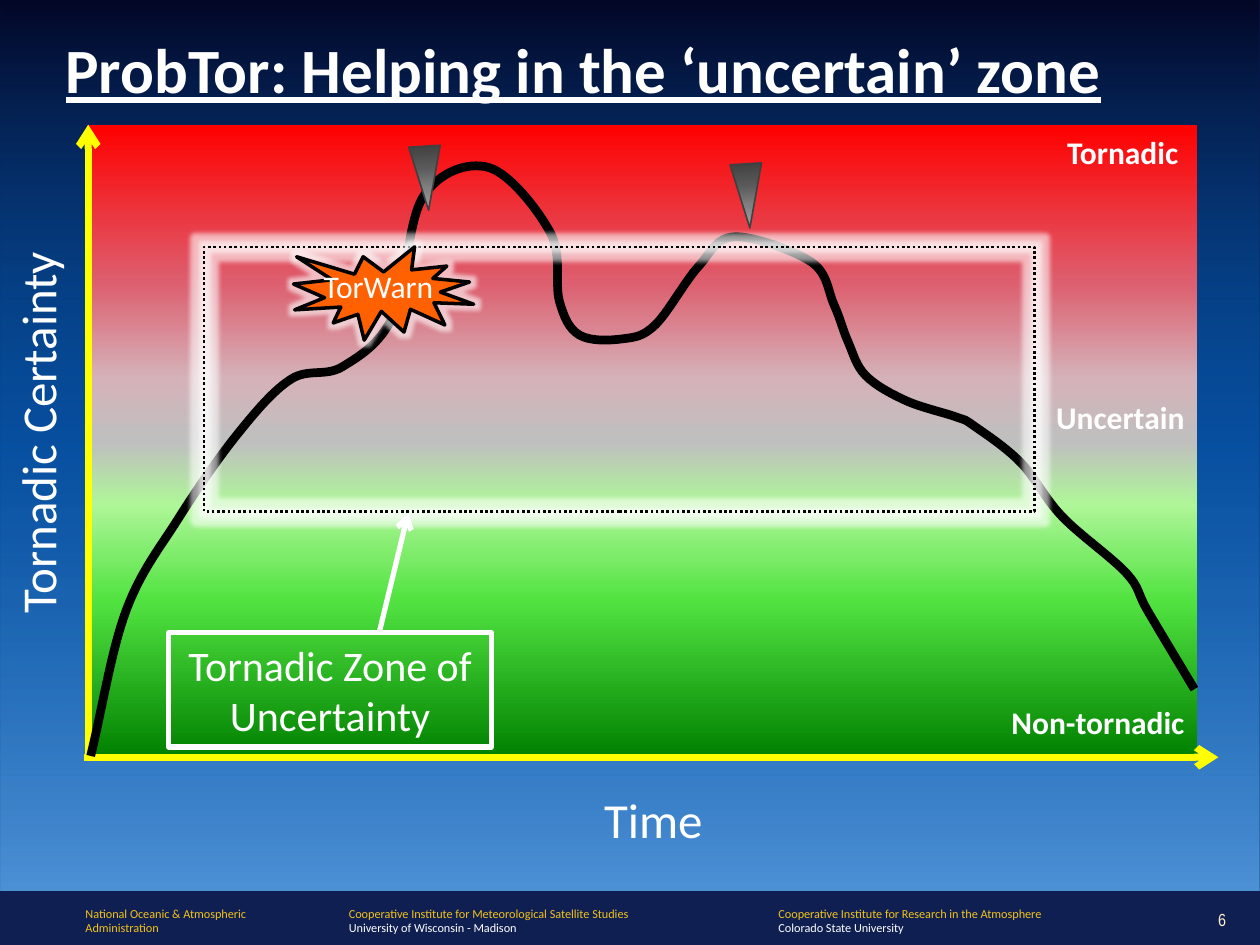
from lxml.etree import SubElement
from pptx import Presentation
from pptx.dml.color import RGBColor
from pptx.enum.dml import MSO_LINE
from pptx.enum.shapes import MSO_CONNECTOR, MSO_SHAPE
from pptx.enum.text import MSO_ANCHOR, PP_ALIGN
from pptx.oxml.ns import qn
from pptx.util import Inches, Pt

WHITE = RGBColor(0xFF, 0xFF, 0xFF)
BLACK = RGBColor(0, 0, 0)
NAVY = RGBColor(0x0F, 0x1F, 0x52)
GOLD = RGBColor(0xF2, 0xC3, 0x1A)
CREAM = RGBColor(0xFF, 0xF1, 0xCE)
YELLOW = RGBColor(0xFF, 0xFF, 0)
ORANGE = RGBColor(0xFF, 0x61, 0)
GREY = RGBColor(0x40, 0x40, 0x40)

# Gradient stops: position, colour, opacity (all in per cent but the colour)
SKY = [(0, "01021E", 85), (50, "007EEB", 50), (100, "61B6FF", 75)]
RISK = [(0, "FF0000", 100), (25, "DD5F6F", 100), (40, "D5B2B9", 100),
        (50, "BFBFBF", 100), (60, "AEF698", 100), (75, "52E341", 100),
        (100, "008000", 100)]
STEEL = [(0, "A6A6A6", 100), (36, "808080", 100), (67, "595959", 100),
         (100, "404040", 100)]

# Points the certainty curve runs through
CURVE = [(0.72, 6), (1, 4.85), (1.42, 4.11), (1.89, 3.44), (2.31, 3.01),
         (2.72, 2.91), (3.12, 2.51), (3.36, 1.56), (3.88, 1.33), (4.37, 1.85),
         (4.44, 2.39), (4.6, 2.66), (4.94, 2.69), (5.2, 2.58), (5.54, 2.12),
         (5.83, 1.88), (6.44, 2.08), (6.62, 2.42), (6.73, 2.71), (6.87, 2.98),
         (7.19, 3.18), (7.59, 3.31), (7.73, 3.38), (8.1, 3.67), (8.43, 4.1),
         (8.94, 4.55), (9.11, 4.85), (9.48, 5.47)]


def style(item, **form):
    """Set each format value as an attribute."""
    for key, val in form.items():
        setattr(item, key, val)


def write(shape, rows, align=PP_ALIGN.LEFT, **form):
    """Fill a shape with (text, colour) paragraphs."""
    frame = shape.text_frame
    for num, (text, color) in enumerate(rows):
        para = frame.add_paragraph() if num else frame.paragraphs[0]
        para.alignment = align
        run = para.add_run()
        run.text = text
        style(run.font, **{"name": "Calibri", **form})
        run.font.color.rgb = color


def label(slide, box, rows, wrap=True, **form):
    shape = slide.shapes.add_textbox(*map(Inches, box))
    shape.text_frame.word_wrap = wrap
    write(shape, rows, **form)
    return shape


def blend(shape, stops):
    """Give a shape a gradient from top to bottom."""
    shape.fill.gradient()
    shape.fill.gradient_angle = 270
    stop_list = shape._element.spPr.find(".//" + qn("a:gsLst"))
    stop_list.clear()
    for pos, color, alpha in stops:
        stop = SubElement(stop_list, qn("a:gs"), pos=str(pos * 1000))
        tint = SubElement(stop, qn("a:srgbClr"), val=color)
        if alpha < 100:
            SubElement(tint, qn("a:alpha"), val=str(alpha * 1000))


def glow(shape):
    effects = shape._element.spPr.find(qn("a:effectLst"))
    halo = SubElement(effects, qn("a:glow"), rad=str(Pt(5)))
    tint = SubElement(halo, qn("a:srgbClr"), val="FFFFFF")
    SubElement(tint, qn("a:alpha"), val="60000")


def draw(slide, kind, box, fill=None, line=None, width=1):
    """Add a preset shape; fill is a colour, gradient stops or None."""
    shape = slide.shapes.add_shape(kind, *map(Inches, box))
    shape.shadow.inherit = False
    if isinstance(fill, list):
        blend(shape, fill)
    elif fill is None:
        shape.fill.background()
    else:
        shape.fill.solid()
        shape.fill.fore_color.rgb = fill
    if line is None:
        shape.line.fill.background()
    else:
        shape.line.color.rgb = line
        shape.line.width = Pt(width)
    return shape


def arrow(slide, start, end, color, width):
    link = slide.shapes.add_connector(
        MSO_CONNECTOR.STRAIGHT, *map(Inches, (*start, *end)))
    link.line.color.rgb = color
    link.line.width = Pt(width)
    props = link._element.spPr
    SubElement(props.find(qn("a:ln")), qn("a:tailEnd"), type="arrow")
    SubElement(props, qn("a:effectLst"))


def smooth(shape):
    """Turn the straight segments of a freeform into Catmull-Rom curves."""
    track = shape._element.spPr.find(".//" + qn("a:path"))
    spots = [(int(pt.get("x")), int(pt.get("y")))
             for pt in track.iter(qn("a:pt"))]
    # Mirrored points beyond both ends
    lead, trail = (tuple(2 * p - q for p, q in zip(end, near))
                   for end, near in (spots[:2], spots[:-3:-1]))
    pad = [lead, *spots, trail]
    for line in track.findall(qn("a:lnTo")):
        track.remove(line)
    for a, b, c, d in zip(pad, pad[1:], pad[2:], pad[3:]):
        bend = SubElement(track, qn("a:cubicBezTo"))
        out = [q + (r - p) / 6 for p, q, r in zip(a, b, c)]
        back = [r - (s - q) / 6 for q, r, s in zip(b, c, d)]
        for x, y in (out, back, c):
            SubElement(bend, qn("a:pt"), x=str(round(x)), y=str(round(y)))


def add_head(slide, box):
    title = slide.shapes.title
    style(title, **dict(zip(("left", "top", "width", "height"),
                            map(Inches, box))))
    title.text_frame.vertical_anchor = MSO_ANCHOR.TOP
    write(title, [("ProbTor: Helping in the ‘uncertain’ zone", WHITE)],
          size=Pt(36), bold=True, underline=True)
    # Sky panel behind the title
    sky = draw(slide, MSO_SHAPE.RECTANGLE, (0, -0.02, 10, 7.09), SKY)
    title._element.addprevious(sky._element)


def add_plot(slide, box):
    x, y, w, h = box
    base = y + h - 0.01
    draw(slide, MSO_SHAPE.RECTANGLE, box, RISK)
    # Axes and their names
    arrow(slide, (x - 0.03, base), (x + w + 0.17, base), YELLOW, 4)
    arrow(slide, (x, base), (x, y), YELLOW, 4)
    for spot, text, turn in (((x - 2.02, y + 2.16, 3.23, 0.57),
                              "Tornadic Certainty", 270),
                             ((x + 3.97, y + 5.23, 1.03, 0.57), "Time", 0)):
        name = label(slide, spot, [(text, WHITE)], wrap=False,
                     align=PP_ALIGN.CENTER, size=Pt(28))
        name.rotation = turn
    # Names of the bands
    for text, drop, wide, inset in (("Non-tornadic", 4.54, 1.88, 0),
                                    ("Tornadic", 0.02, 1.25, 0.05),
                                    ("Uncertain", 2.12, 1.88, 0)):
        label(slide, (x + w - wide - inset, y + drop, wide, 0.4),
              [(text, WHITE)], align=PP_ALIGN.RIGHT, size=Pt(18), bold=True)
    # Certainty curve
    first, *rest = [tuple(map(Inches, point)) for point in CURVE]
    maker = slide.shapes.build_freeform(*first)
    maker.add_line_segments(rest, close=False)
    curve = maker.convert_to_shape()
    smooth(curve)
    curve.shadow.inherit = False
    curve.fill.background()
    curve.line.color.rgb = BLACK
    curve.line.width = Pt(5)


def add_zone(slide, box):
    x, y, w, h = box
    zone = draw(slide, MSO_SHAPE.RECTANGLE, box, None, BLACK, 1.5)
    zone.line.dash_style = MSO_LINE.ROUND_DOT
    glow(zone)
    # Tornado marks
    for left, top in ((x + 1.64, y - 0.8), (x + 4.19, y - 0.66)):
        mark = draw(slide, MSO_SHAPE.ISOSCELES_TRIANGLE,
                    (left, top, 0.25, 0.51), STEEL, GREY, 0.94)
        mark.rotation = 176.4
    # Warning burst
    burst = draw(slide, MSO_SHAPE.EXPLOSION1, (x + 0.71, y, 1.43, 0.74),
                 ORANGE, BLACK, 2)
    glow(burst)
    label(slide, (x + 0.85, y + 0.11, 1.13, 0.4), [("TorWarn", WHITE)],
          size=Pt(18))


def add_note(slide, box):
    x, y, w, h = box
    note = draw(slide, MSO_SHAPE.RECTANGLE, box, None, WHITE, 3)
    write(note, [("Tornadic Zone of Uncertainty", WHITE)],
          align=PP_ALIGN.CENTER, size=Pt(24))
    arrow(slide, (x + 1.67, y), (x + 1.9, y - 0.95), WHITE, 3)


def add_foot(slide, box):
    x, y, w, h = box
    for left, wide, top, low, tone in (
            (2.67, 2.92, "Cooperative Institute for Meteorological Satellite Studies",
             "University of Wisconsin - Madison", WHITE),
            (0.58, 1.58, "National Oceanic & Atmospheric",
             "Administration", GOLD),
            (6.08, 2.92, "Cooperative Institute for Research in the Atmosphere",
             "Colorado State University", WHITE)):
        label(slide, (x + left, y + 0.07, wide, 0.34),
              [(top, GOLD), (low, tone)], size=Pt(7))
    page = label(slide, (x + w - 0.67, y + 0.1, 0.5, 0.25), [("6", CREAM)],
                 align=PP_ALIGN.RIGHT, size=Pt(10), name="Arial Narrow")
    page.text_frame.vertical_anchor = MSO_ANCHOR.MIDDLE


def main():
    deck = Presentation()
    style(deck, slide_width=Inches(10), slide_height=Inches(7.5))
    slide = deck.slides.add_slide(deck.slide_layouts[5])
    slide.background.fill.solid()
    slide.background.fill.fore_color.rgb = NAVY
    add_head(slide, (0.42, 0.19, 9.08, 0.71))
    add_foot(slide, (0, 7.07, 10, 0.43))
    add_plot(slide, (0.7, 0.99, 8.8, 5.03))
    add_zone(slide, (1.62, 1.96, 6.59, 2.1))
    add_note(slide, (1.34, 5.02, 2.56, 0.91))
    deck.save("out.pptx")


if __name__ == "__main__":
    main()
